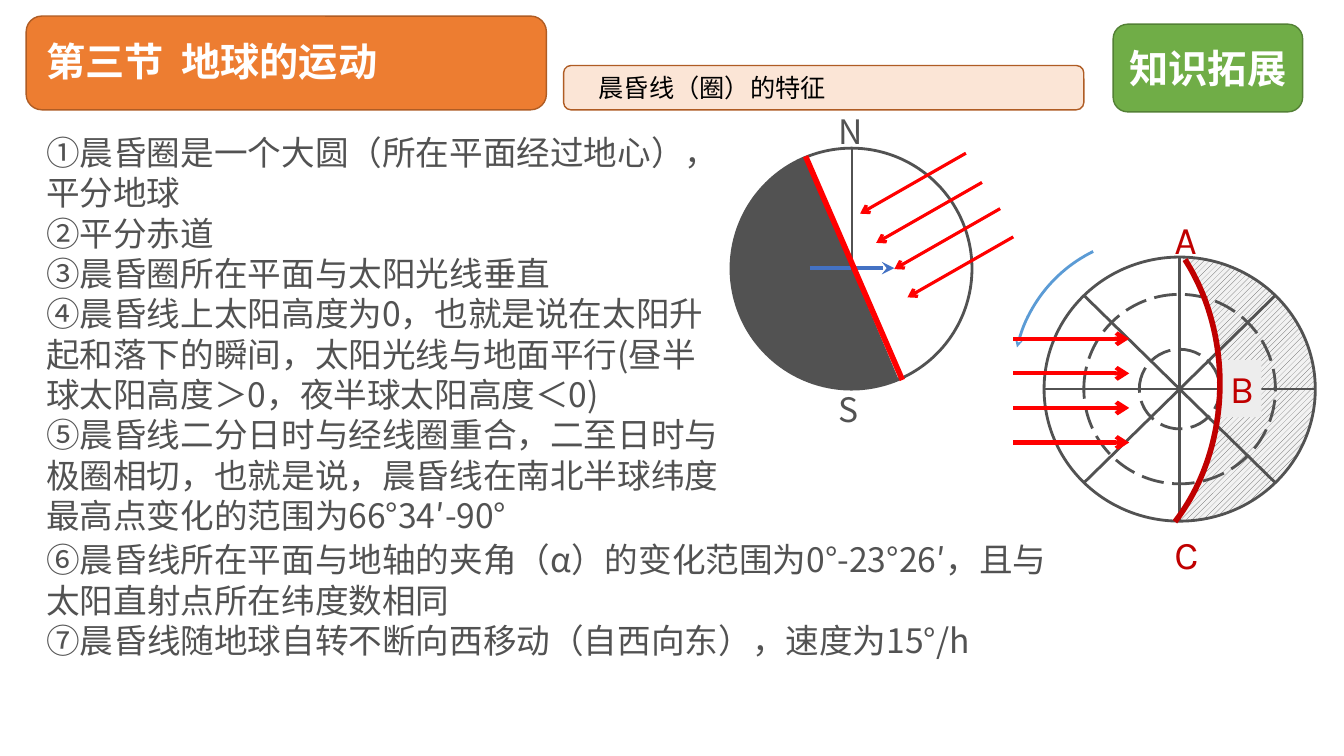
from math import cos, radians, sin
from lxml.etree import SubElement
from pptx import Presentation
from pptx.dml.color import RGBColor
from pptx.enum.dml import MSO_LINE, MSO_PATTERN
from pptx.enum.shapes import MSO_CONNECTOR, MSO_SHAPE
from pptx.enum.text import MSO_ANCHOR, PP_ALIGN
from pptx.oxml.ns import qn
from pptx.util import Inches, Pt

WHITE = RGBColor(0xFF, 0xFF, 0xFF)
BLACK = RGBColor(0, 0, 0)
GREY = RGBColor(0x52, 0x52, 0x52)
PALE = RGBColor(0xF2, 0xF2, 0xF2)
PLATE = RGBColor(0xED, 0xED, 0xED)
ORANGE = RGBColor(0xED, 0x7D, 0x31)
PEACH = RGBColor(0xFB, 0xE5, 0xD6)
RUST = RGBColor(0xAF, 0x5C, 0x24)
GREEN = RGBColor(0x70, 0xAD, 0x47)
MOSS = RGBColor(0x53, 0x80, 0x35)
RED = RGBColor(0xFF, 0, 0)
DARK = RGBColor(0xC0, 0, 0)
BLUE = RGBColor(0x44, 0x72, 0xC4)
SKY = RGBColor(0x5B, 0x9B, 0xD5)

HEAD = {"size": Pt(28), "bold": True, "name": "Calibri"}
SUB = {"size": Pt(18), "name": "Calibri"}
BODY = {"size": Pt(24), "name": "Noto Sans CJK SC"}
MARK = {"size": Pt(28), "name": "Karla"}

prs = Presentation()
prs.slide_width, prs.slide_height = Inches(13.33), Inches(7.5)
shapes = prs.slides.add_slide(prs.slide_layouts[6]).shapes


def draw(kind, at, color, width, fill=None, dash=None, ends={}):
    """Add a preset shape, or a line when kind is None."""
    at = [Inches(v) for v in at]
    if kind is None:
        item = shapes.add_connector(MSO_CONNECTOR.STRAIGHT, *at)
    else:
        item = shapes.add_shape(kind, *at)
        if fill is None:
            item.fill.background()
        else:
            item.fill.solid()
            item.fill.fore_color.rgb = fill
    item.line.color.rgb = color
    item.line.width = Pt(width)
    if dash:
        item.line.dash_style = dash
    for end, style in ends.items():
        SubElement(item.line._get_or_add_ln(), qn("a:" + end)).set("type", style)
    SubElement(item.element.spPr, qn("a:effectLst"))
    return item


def write(at, lines, form, color, wrap=True, anchor=MSO_ANCHOR.TOP,
          align=PP_ALIGN.LEFT, space=1.0):
    """Add a text box with one paragraph per line."""
    box = shapes.add_textbox(*[Inches(v) for v in at])
    frame = box.text_frame
    frame.word_wrap, frame.vertical_anchor = wrap, anchor
    frame.text = "\n".join(lines)
    for para in frame.paragraphs:
        para.alignment, para.line_spacing = align, space
        font = para.runs[0].font
        font.color.rgb = color
        for key, value in form.items():
            setattr(font, key, value)
        SubElement(font._element, qn("a:ea")).set("typeface", "Noto Sans CJK SC")
    return box


# Header
ROUND = MSO_SHAPE.ROUNDED_RECTANGLE
draw(ROUND, (0.26, 0.16, 5.16, 0.93), RUST, 1, ORANGE)
draw(ROUND, (5.59, 0.65, 5.16, 0.44), RUST, 1, PEACH)
write((0.36, 0.24, 4.98, 0.78), ["第三节  地球的运动"], HEAD, WHITE,
      anchor=MSO_ANCHOR.MIDDLE, space=0.9)
draw(ROUND, (11.04, 0.24, 1.88, 0.87), MOSS, 1, GREEN)
write((11.04, 0.24, 1.88, 0.87), ["知识拓展"], HEAD, WHITE,
      anchor=MSO_ANCHOR.MIDDLE, align=PP_ALIGN.CENTER)
write((5.84, 0.67, 2.45, 0.4), ["晨昏线（圈）的特征"], SUB, BLACK, wrap=False)

# Side view of the globe
globe = (7.25, 1.47, 2.39, 2.39)
night = draw(MSO_SHAPE.CHORD, globe, GREY, 1, GREY)
night.adjustments[0], night.adjustments[1] = 40.174, 148.411
night.fill.patterned()
night.fill.pattern = MSO_PATTERN.DARK_HORIZONTAL
night.fill.fore_color.rgb, night.fill.back_color.rgb = GREY, WHITE
night.line.fill.background()
draw(None, (8.03, 2.66, 8.87, 2.66), BLUE, 3, ends={"tailEnd": "stealth"})
draw(None, (8.45, 1.47, 8.45, 3.86), GREY, 2)
draw(MSO_SHAPE.OVAL, globe, GREY, 2)
draw(None, (7.99, 1.55, 8.95, 3.77), RED, 4)
for name, top in (("N", 1.05), ("S", 3.81)):
    write((8.22, top, 0.47, 0.5), [name], BODY, GREY, wrap=False)

# Polar view: night side between the rim and the terminator
cx, cy = 11.7, 3.86
rim = [(cx + 1.34 * cos(radians(a)), cy + 1.31 * sin(radians(a)))
       for a in range(-90, 91, 3)]
edge = [(10.47 + 1.6 * cos(radians(a)), 3.8 + 2.05 * sin(radians(a)))
        for a in range(39, -37, -3)]
path = [(Inches(x), Inches(y)) for x, y in rim + edge]
pen = shapes.build_freeform(*path[0])
pen.add_line_segments(path[1:])
shade = pen.convert_to_shape()
shade.shadow.inherit = False
shade.line.fill.background()
shade.fill.patterned()
shade.fill.pattern = MSO_PATTERN.WIDE_UPWARD_DIAGONAL
shade.fill.fore_color.rgb, shade.fill.back_color.rgb = GREY, PALE

# Latitude circles and meridians
for wide, high, dash in ((2.69, 2.62, None), (1.9, 1.88, MSO_LINE.LONG_DASH),
                         (0.8, 0.79, MSO_LINE.LONG_DASH)):
    draw(MSO_SHAPE.OVAL, (cx - wide / 2, cy - high / 2, wide, high), GREY, 2, dash=dash)
for dx, dy in ((0.95, 0.93), (0, 1.31), (-0.95, 0.93), (1.345, 0)):
    draw(None, (cx - dx, cy - dy, cx + dx, cy + dy), GREY, 2)

# Direction of spin, point labels and terminator
spin = draw(MSO_SHAPE.ARC, (10.05, 2.35, 2.83, 2.83), SKY, 2, ends={"headEnd": "stealth"})
spin.rotation = 180
spin.adjustments[0], spin.adjustments[1] = 7.796, 38.327
for name, left, top in (("A", 11.55, 2.09), ("B", 12.1, 3.57), ("C", 11.55, 5.21)):
    label = write((left, top, 0.41 if name == "B" else 0.45, 0.57), [name], MARK, DARK)
    if name == "B":
        label.fill.solid()
        label.fill.fore_color.rgb = PLATE
dusk = draw(MSO_SHAPE.ARC, (8.84, 1.81, 3.26, 3.99), DARK, 4)
dusk.adjustments[0], dusk.adjustments[1] = 189.729, 29.514

# Features
write((0.36, 1.26, 6.97, 4.14), [
    "①晨昏圈是一个大圆（所在平面经过地心），平分地球",
    "②平分赤道",
    "③晨昏圈所在平面与太阳光线垂直",
    "④晨昏线上太阳高度为0，也就是说在太阳升起和落下的瞬间，太阳光线与地面平行"
    "(昼半球太阳高度＞0，夜半球太阳高度＜0)",
    "⑤晨昏线二分日时与经线圈重合，二至日时与极圈相切，也就是说，"
    "晨昏线在南北半球纬度最高点变化的范围为66°34′-90°",
], BODY, GREY)
write((0.36, 5.3, 10.39, 1.31), [
    "⑥晨昏线所在平面与地轴的夹角（α）的变化范围为0°-23°26′，且与太阳直射点所在纬度数相同",
    "⑦晨昏线随地球自转不断向西移动（自西向东），速度为15°/h",
], BODY, GREY)

# Sun rays
for x, y in ((9.58, 1.52), (9.74, 1.81), (9.92, 2.07), (10.05, 2.35)):
    draw(None, (x, y, x - 1.05, y + 0.6), RED, 2.25, ends={"tailEnd": "arrow"})
for row in range(4):
    y = 4.39 - row * 0.343
    draw(None, (10.05, y, 11.2, y), RED, 3, ends={"tailEnd": "arrow"})

prs.save("out.pptx")
